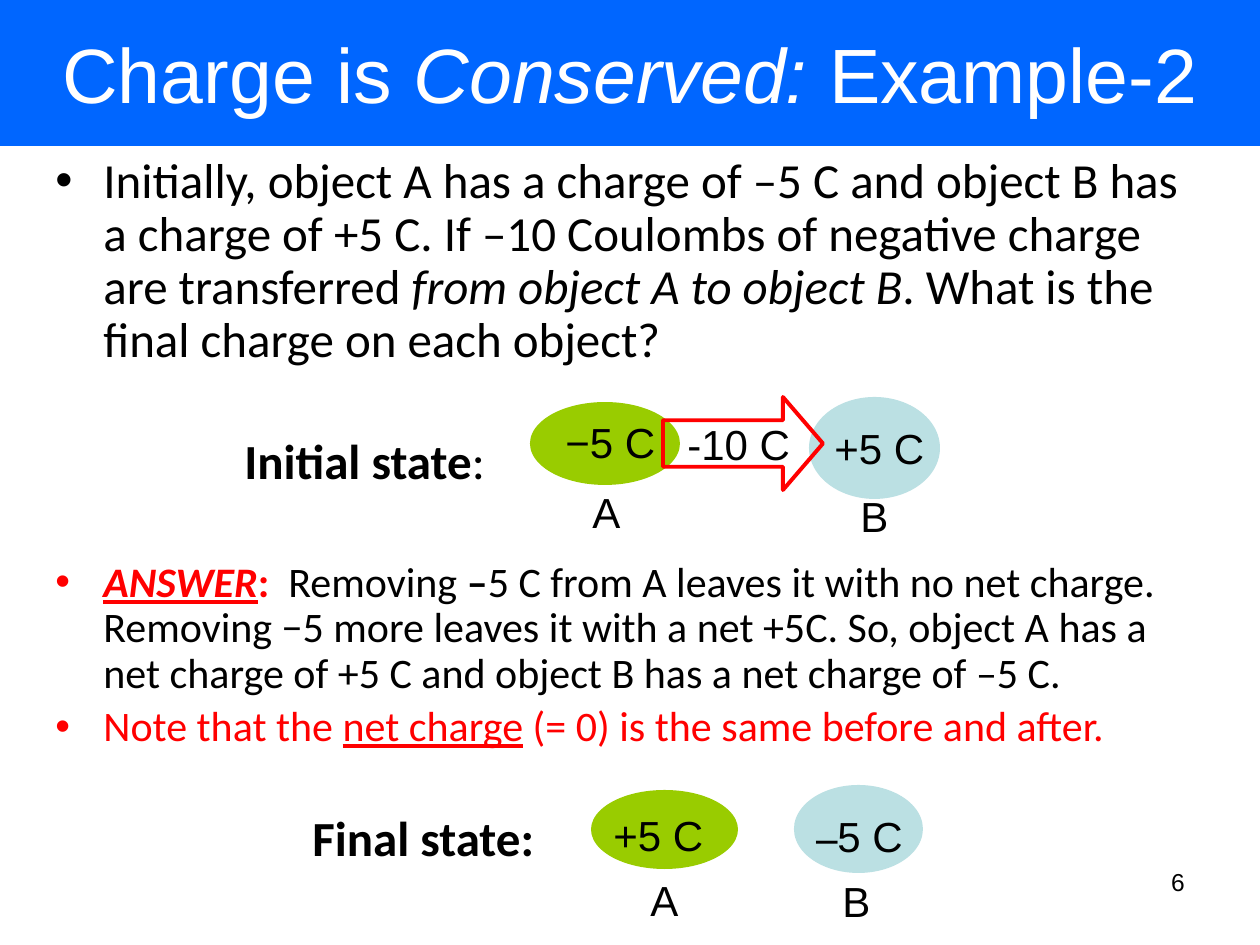
from dataclasses import dataclass

from lxml.etree import SubElement
from pptx import Presentation
from pptx.dml.color import RGBColor
from pptx.enum.shapes import MSO_SHAPE
from pptx.enum.text import MSO_ANCHOR, PP_ALIGN
from pptx.oxml.ns import qn
from pptx.util import Inches, Pt

PX = Inches(1) / 126


def px(length):
    return round(length * PX)


@dataclass(frozen=True)
class Theme:
    black: str = "000000"
    white: str = "FFFFFF"
    red: str = "FF0000"
    banner: str = "0066FF"
    green: str = "99CC00"
    pale_blue: str = "BBE0E3"
    sans: str = "Arial"
    body: str = "Calibri"
    serif: str = "Times New Roman"
    title_size: int = 44
    question_size: int = 28
    answer_size: int = 24
    number_size: int = 14


THEME = Theme()


def write(paragraph, text, font=THEME.sans, size=THEME.answer_size, color=THEME.black,
          bold=False, italic=False, underline=False):
    run = paragraph.add_run()
    run.text = text
    run.font.name = font
    run.font.size = Pt(size)
    run.font.color.rgb = RGBColor.from_string(color)
    run.font.bold = bold
    run.font.italic = italic
    run.font.underline = underline


def write_runs(paragraph, runs, **base):
    for text, changes in runs:
        write(paragraph, text, **{**base, **changes})


class SlideBuilder:
    def __init__(self, slide, theme):
        self.slide = slide
        self.theme = theme

    def title(self, runs, box):
        shape = self.slide.shapes.title
        shape.left, shape.top, shape.width, shape.height = map(px, box)
        shape.fill.solid()
        shape.fill.fore_color.rgb = RGBColor.from_string(self.theme.banner)
        frame = shape.text_frame
        frame.vertical_anchor = MSO_ANCHOR.MIDDLE
        paragraph = frame.paragraphs[0]
        paragraph.alignment = PP_ALIGN.CENTER
        write_runs(paragraph, runs, size=self.theme.title_size, color=self.theme.white)

    def text(self, paragraphs, box, wrap=False, align=PP_ALIGN.LEFT, bullet=None,
             line_spacing=1.0, gap=0, **base):
        frame = self.slide.shapes.add_textbox(*map(px, box)).text_frame
        frame.word_wrap = wrap
        for index, runs in enumerate(paragraphs):
            paragraph = frame.add_paragraph() if index else frame.paragraphs[0]
            paragraph.alignment = align
            paragraph.line_spacing = line_spacing
            paragraph.space_before = Pt(gap if index else 0)
            if bullet:
                self.bullet(paragraph, bullet)
            write_runs(paragraph, runs, **base)

    def bullet(self, paragraph, color):
        properties = paragraph._p.get_or_add_pPr()
        properties.set("marL", str(px(48)))
        properties.set("indent", str(px(-48)))
        fill = SubElement(properties, qn("a:buClr"))
        SubElement(fill, qn("a:srgbClr"), val=color)
        SubElement(properties, qn("a:buFont"), typeface=self.theme.sans)
        SubElement(properties, qn("a:buChar"), char="•")

    def ellipse(self, box, color):
        shape = self.slide.shapes.add_shape(MSO_SHAPE.OVAL, *map(px, box))
        shape.shadow.inherit = False
        shape.fill.solid()
        shape.fill.fore_color.rgb = RGBColor.from_string(color)
        shape.line.fill.background()

    def transfer_arrow(self, box):
        shape = self.slide.shapes.add_shape(MSO_SHAPE.RIGHT_ARROW, *map(px, box))
        shape.shadow.inherit = False
        shape.adjustments[0] = 0.5
        shape.adjustments[1] = 0.43
        shape.fill.background()
        shape.line.color.rgb = RGBColor.from_string(self.theme.red)
        shape.line.width = Pt(2.25)

    def charged_object(self, name, charge, color, ellipse, charge_at, name_at):
        self.ellipse(ellipse, color)
        self.text([charge], (*charge_at, 115, 63))
        self.text([[(name, {})]], (*name_at, 53, 63))


def main():
    presentation = Presentation()
    presentation.slide_width = px(1260)
    presentation.slide_height = px(945)
    slide = presentation.slides.add_slide(presentation.slide_layouts[5])
    builder = SlideBuilder(slide, THEME)
    prose = dict(font=THEME.body, line_spacing=0.9)
    red = dict(color=THEME.red)
    red_bold = dict(color=THEME.red, bold=True)

    builder.title([("Charge is ", {}), ("Conserved: ", dict(italic=True)), ("Example-2", {})],
                  (0, 0, 1260, 146))
    builder.text([[
        ("Initially, object A has a charge of –5 C and object B has a charge of +5 C. "
         "If –10 Coulombs of negative charge are transferred ", {}),
        ("from object A to object B", dict(italic=True)),
        (". What is the final charge on each object?", {}),
    ]], (43, 150, 1177, 230), wrap=True, bullet=THEME.black, size=THEME.question_size, **prose)
    builder.text([
        [("ANSWER", dict(red_bold, italic=True, underline=True)),
         (":  ", red_bold),
         ("Removing ", {}),
         ("–", dict(bold=True)),
         ("5 C from A leaves it with no net charge. Removing −5 more leaves it with a net +5C. "
          "So, object A has a net charge of +5 C and object B has a net charge of –5 C.", {})],
        [("Note that the ", red),
         ("net charge", dict(red, underline=True)),
         (" (= 0) is the same before and after.", red)],
    ], (43, 555, 1177, 205), wrap=True, bullet=THEME.red, gap=4.8, **prose)

    bold = dict(bold=True)
    for label, box in [
        ([("Initial state", bold), (":", {})], (232, 431, 270, 66)),
        ([("Final state:", bold)], (300, 808, 250, 66)),
    ]:
        builder.text([label], box, size=THEME.question_size, **prose)

    minus = ("–", dict(font=THEME.serif, bold=True))
    for charged in [
        ("A", [("−5 C", {})], THEME.green, (530, 402, 150, 83), (553, 410), (580, 480)),
        ("B", [("+5 C", {})], THEME.pale_blue, (809, 397, 131, 102), (822, 416), (848, 484)),
        ("A", [("+5 C", {})], THEME.green, (591, 790, 147, 79), (601, 803), (638, 868)),
        ("B", [minus, ("5 C", {})], THEME.pale_blue, (794, 785, 129, 88), (804, 804), (830, 869)),
    ]:
        builder.charged_object(*charged)

    builder.text([[("-10 C", {})]], (675, 412, 129, 63))
    builder.transfer_arrow((663, 397, 160, 93))
    builder.text([[("6", {})]], (903, 861, 294, 66), wrap=True, align=PP_ALIGN.RIGHT,
                 size=THEME.number_size)
    presentation.save("out.pptx")


if __name__ == "__main__":
    main()
